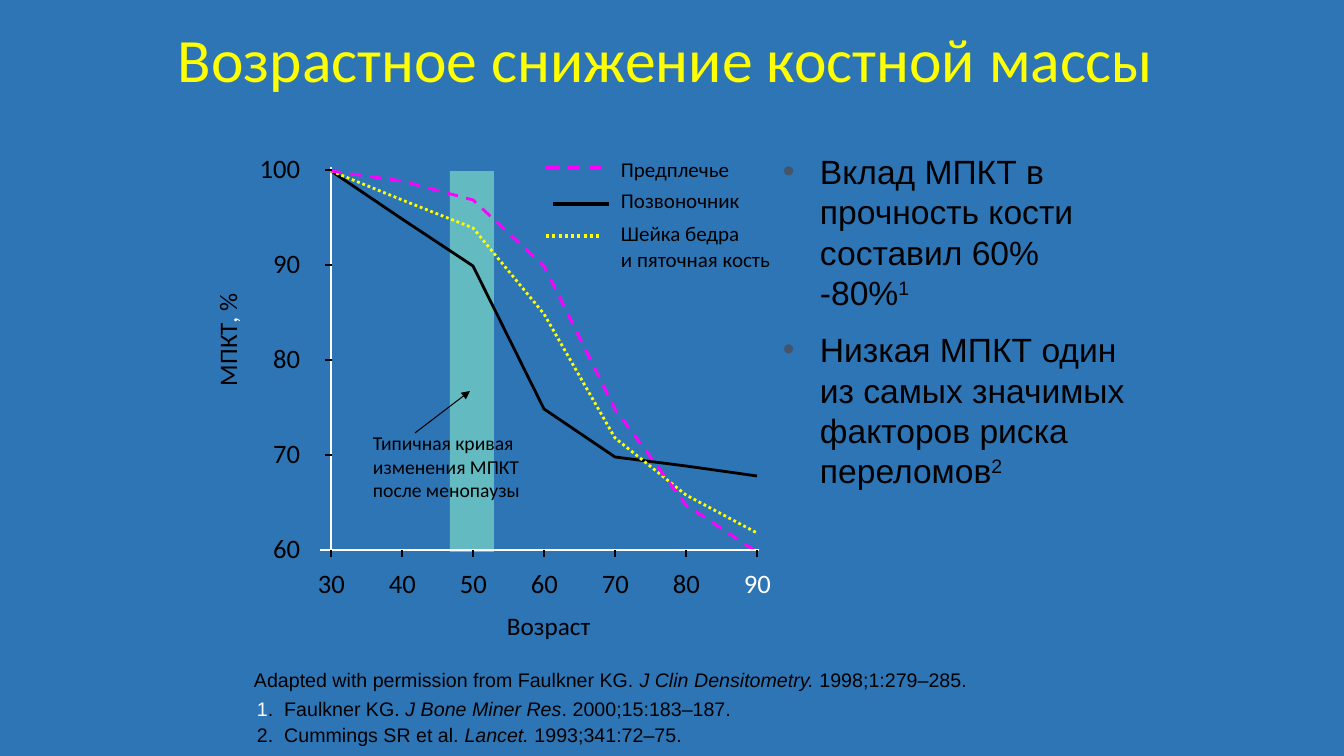
import pptx
import pptx.util
import pptx.dml.color
import pptx.enum.dml
import pptx.enum.shapes
import pptx.enum.text
import pptx.oxml
import pptx.oxml.ns

RGB = pptx.dml.color.RGBColor
BLUE = RGB(0x2E, 0x75, 0xB6)
BLACK = RGB(0, 0, 0)
WHITE = RGB(255, 255, 255)
YELLOW = RGB(255, 255, 0)
PINK = RGB(255, 0, 255)
MINT = RGB(0x99, 0xFF, 0xCC)
SLATE = RGB(0x44, 0x54, 0x6A)
DASH = pptx.enum.dml.MSO_LINE.DASH
DOT = pptx.enum.dml.MSO_LINE.ROUND_DOT
SHAPE = pptx.enum.shapes.MSO_SHAPE
LINK = pptx.enum.shapes.MSO_CONNECTOR.STRAIGHT
MID = pptx.enum.text.MSO_ANCHOR.MIDDLE
RIGHT = pptx.enum.text.PP_ALIGN.RIGHT
GROW = pptx.enum.text.MSO_AUTO_SIZE.SHAPE_TO_FIT_TEXT
PX = 914400 / 100.8


def emu(px):
    return pptx.util.Emu(round(px * PX))


def child(node, tag, **attrs):
    item = pptx.oxml.parse_xml(f"<a:{tag} {pptx.oxml.ns.nsdecls('a')}/>")
    for key, val in attrs.items():
        item.set(key, val)
    node.append(item)
    return item


def apply(target, values):
    for key, val in values.items():
        setattr(target, key, val)


class Board:
    def __init__(self, slide):
        self.slide = slide
        self.shapes = slide.shapes
        fill = slide.background.fill
        fill.solid()
        fill.fore_color.rgb = BLUE

    def stroke(self, line, color, width, dash=None):
        line.color.rgb = color
        line.width = pptx.util.Pt(width)
        if dash:
            line.dash_style = dash

    def line(self, start, end, color, width=1, dash=None, arrow=False):
        item = self.shapes.add_connector(LINK, *map(emu, start + end))
        self.stroke(item.line, color, width, dash)
        props = item._element.spPr
        if arrow:
            child(props.find(pptx.oxml.ns.qn("a:ln")), "tailEnd", type="triangle")
        child(props, "effectLst")

    def curve(self, points, color, dash):
        pen = self.shapes.build_freeform(*points[0], scale=PX)
        pen.add_line_segments(points[1:], close=False)
        item = pen.convert_to_shape()
        item.shadow.inherit = False
        item.fill.background()
        self.stroke(item.line, color, 2, dash)

    def band(self, box, color, alpha):
        item = self.shapes.add_shape(SHAPE.RECTANGLE, *map(emu, box))
        item.shadow.inherit = False
        item.line.fill.background()
        item.fill.solid()
        item.fill.fore_color.rgb = color
        tint = item._element.spPr.find(".//" + pptx.oxml.ns.qn("a:srgbClr"))
        child(tint, "alpha", val=str(alpha * 1000))

    def text(self, box, paras, size, name="Calibri", color=BLACK, pad=(0, 0),
             turn=0, wrap=True, indent=None, bullet=False, frame=None, para=None):
        item = self.shapes.add_textbox(*map(emu, box))
        item.rotation = turn
        body = item.text_frame
        side, top = map(emu, pad)
        apply(body, {"margin_left": side, "margin_right": side,
                     "margin_top": top, "margin_bottom": top,
                     "word_wrap": wrap, "auto_size": GROW, **(frame or {})})
        for num, runs in enumerate(paras):
            part = body.add_paragraph() if num else body.paragraphs[0]
            apply(part, para or {})
            if indent:
                props = part._p.get_or_add_pPr()
                props.set("marL", str(emu(indent[0])))
                props.set("indent", str(emu(indent[1])))
                if bullet:
                    child(child(props, "buClr"), "srgbClr", val=str(SLATE))
                    child(props, "buFont", typeface="Arial")
                    child(props, "buChar", char="•")
            for words, look in [(r, {}) if isinstance(r, str) else r for r in runs]:
                run = part.add_run()
                run.text = words
                style = {"size": pptx.util.Pt(size), "name": name, **look}
                raised = style.pop("raised", False)
                run.font.color.rgb = style.pop("color", color)
                apply(run.font, style)
                if raised:
                    run._r.get_or_add_rPr().set("baseline", "30000")


deck = pptx.Presentation()
apply(deck, {"slide_width": emu(1344), "slide_height": emu(756)})
board = Board(deck.slides.add_slide(deck.slide_layouts[6]))
ITALIC = {"italic": True}
PALE = {"color": WHITE}
RAISED = {"raised": True}
PAD = (10, 5)

board.text((168, 0, 1008, 126), [["Возрастное снижение костной массы"]], 44,
           color=YELLOW, pad=PAD, para={"line_spacing": 0.9},
           frame={"vertical_anchor": MID, "auto_size": None})
board.text((244, 663, 798, 33),
           [["Adapted with permission from Faulkner KG.",
             (" J Clin Densitometry. ", ITALIC), "1998;1:279–285."]],
           14, "Arial", pad=PAD, indent=(13, -13))
board.band((450, 171, 44, 381), MINT, 50)

LEFT, BASE, STEP, RISE = 331, 550, 71, 95
board.line((LEFT, 167), (LEFT, BASE), WHITE)
SERIES = [
    ([100, 95, 90, 75, 70, 69, 68], BLACK, None),
    ([100, 97, 94, 85, 72, 66, 62], YELLOW, DOT),
    ([100, 99, 97, 90, 75, 65, 60], PINK, DASH),
]
for values, color, dash in SERIES:
    points = [(LEFT + STEP * k, round(171 + 9.53 * (100 - v)))
              for k, v in enumerate(values)]
    board.curve(points, color, dash)
board.line((320, BASE), (759, BASE), WHITE)

for k, mass in enumerate(range(60, 101, 10)):
    level = BASE - RISE * k
    board.text((250, level - 18, 50, 32), [[str(mass)]], 19,
               para={"alignment": RIGHT})
    if k:
        board.line((325, level), (332, level), BLACK)
for k, age in enumerate(range(30, 91, 10)):
    place = LEFT + STEP * k
    color = WHITE if age == 90 else BLACK
    board.text((place - 13, 567, 27, 32), [[str(age)]], 19, color=color, wrap=False)
    board.line((place, 557), (place, 550), BLACK)

board.text((507, 610, 85, 30), [["Возраст"]], 18, wrap=False)
board.text((112, 256, 230, 30), [["МПКТ", (",", PALE), " %"]], 18, turn=270)

LEGEND = [
    (157, ["Предплечье"], (546, 608, 168), PINK, DASH),
    (188, ["Позвоночник"], (553, 609, 204), BLACK, None),
    (221, ["Шейка бедра", "и пяточная кость"], (546, 602, 236), YELLOW, DOT),
]
for top, names, (start, end, level), color, dash in LEGEND:
    board.text((621, top, 160, 25 * len(names)), [[n] for n in names], 15)
    board.line((start, level), (end, level), color, 2.25, dash)

board.text((363, 426, 209, 82),
           [["Типичная кривая изменения МПКТ после менопаузы"]], 14, pad=PAD)
board.line((415, 433), (470, 391), BLACK, 0.75, arrow=True)
board.text((773, 146, 370, 356),
           [["Вклад МПКТ в прочность кости составил 60% -80%", ("1", RAISED)],
            ["Низкая МПКТ один из самых значимых факторов риска переломов",
             ("2", RAISED)]],
           24, "Arial", pad=PAD, indent=(37, -37), bullet=True,
           para={"space_before": pptx.util.Pt(12)})
board.text((244, 700, 489, 47),
           [[("1", PALE), ".  Faulkner KG. ", ("J Bone Miner Res", ITALIC),
             ". 2000;15:183–187."],
            ["2.  Cummings SR et al. ", ("Lancet.", ITALIC), " 1993;341:72–75."]],
           14, "Arial", wrap=False, indent=(13, 0),
           para={"line_spacing": 0.9, "space_before": pptx.util.Pt(3)})

deck.save("out.pptx")
